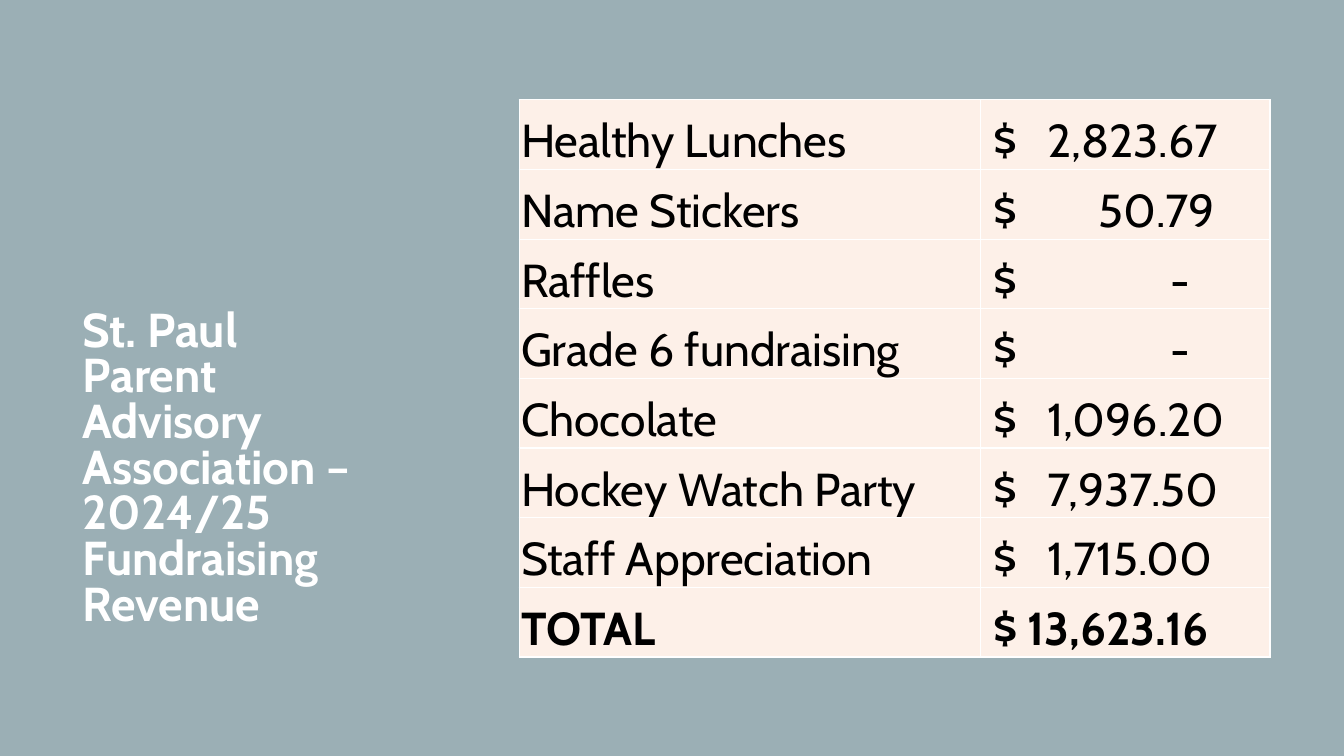
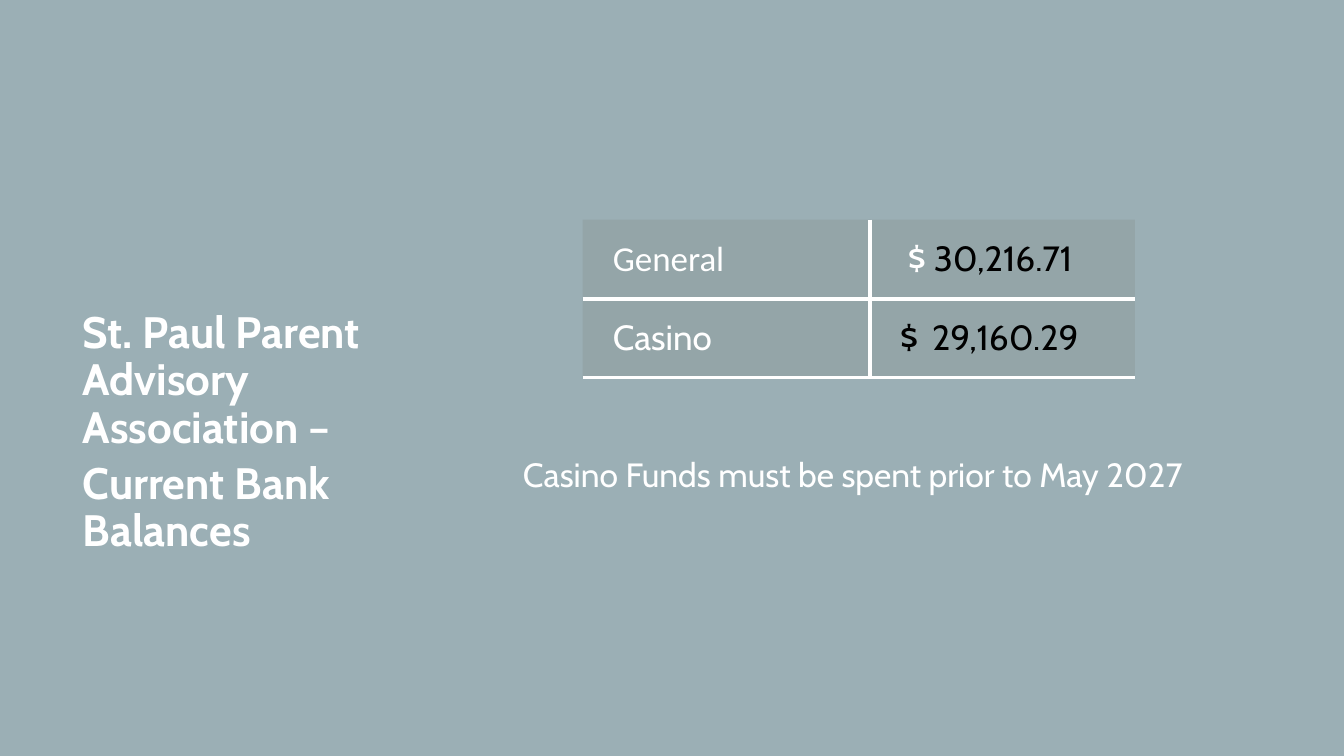
from pptx import Presentation
from pptx.dml.color import RGBColor
from pptx.enum.text import MSO_ANCHOR, MSO_AUTO_SIZE, PP_ALIGN
from pptx.oxml.ns import qn
from pptx.util import Pt
from lxml.etree import SubElement

SLATE = RGBColor(0x9B, 0xAF, 0xB5)
CREAM = RGBColor(0xFD, 0xF0, 0xE8)
GREY = RGBColor(0x87, 0x8E, 0x8B)
WHITE = RGBColor(0xFF, 0xFF, 0xFF)
BLACK = RGBColor(0x00, 0x00, 0x00)
FONT = "Cabin"
NO_STYLE = "{2D5ABB26-0587-4C30-8999-92F81FD0307C}"

TITLE_BOX = {"left": Pt(51.84), "top": Pt(218.16), "width": Pt(226.8), "height": Pt(241.92)}
TITLE_FRAME = {"word_wrap": True, "auto_size": MSO_AUTO_SIZE.NONE, "vertical_anchor": MSO_ANCHOR.TOP}
TITLES = [
    (["St. Paul Parent Advisory Association – 2024/25 Fundraising Revenue"], 34, 0.8),
    (["St. Paul Parent Advisory Association –", "Current Bank Balances"], 31.4, 0.9),
]
REVENUE = [
    ("Healthy Lunches", "$\t2,823.67", 38.5),
    ("Name Stickers", "$\t50.79", 75.5),
    ("Raffles", "$\t-", 127),
    ("Grade 6 fundraising", "$\t-", 127),
    ("Chocolate", "$\t1,096.20", 38.5),
    ("Hockey Watch Party", "$\t7,937.50", 38.5),
    ("Staff Appreciation", "$\t1,715.00", 38.5),
    ("TOTAL", "$ 13,623.16", None),
]
BALANCES = [
    [([("General", WHITE, "Calibri")], 21.6, None, "RB"),
     ([("$ ", WHITE, FONT), ("30,216.71", BLACK, FONT)], 27.2, None, "LB")],
    [([("Casino", WHITE, FONT)], 21.6, None, "RTB"),
     ([("$\t29,160.29", BLACK, FONT)], 21.6, 22.8, "LTB")],
]


def apply(obj, values):
    for name, value in values.items():
        setattr(obj, name, value)


def fill_cell(cell, runs, size, margins, tab, sides, line, color):
    left, top, right, bottom = map(Pt, margins)
    apply(cell, {"margin_left": left, "margin_top": top, "margin_right": right,
                 "margin_bottom": bottom, "vertical_anchor": MSO_ANCHOR.BOTTOM})
    p = cell.text_frame.paragraphs[0]
    if tab:
        tabs = SubElement(p._p.get_or_add_pPr(), qn("a:tabLst"))
        SubElement(tabs, qn("a:tab"), pos=str(Pt(tab)), algn="l")
    for text, ink, font, bold in runs:
        r = p.add_run()
        r.text = text
        apply(r.font, {"name": font, "size": Pt(size), "bold": bold})
        r.font.color.rgb = ink
    tc_pr = cell._tc.get_or_add_tcPr()
    for side in sides:
        ln = SubElement(tc_pr, qn(f"a:ln{side}"), w=str(Pt(line)))
        SubElement(SubElement(ln, qn("a:solidFill")), qn("a:srgbClr"), val=str(WHITE))
    cell.fill.solid()
    cell.fill.fore_color.rgb = color


prs = Presentation()
apply(prs, {"slide_width": Pt(960), "slide_height": Pt(540)})
bg = prs.slide_master.background.fill
bg.solid()
bg.fore_color.rgb = SLATE

slides = []
for lines, size, spacing in TITLES:
    s = prs.slides.add_slide(prs.slide_layouts[5])
    slides.append(s)
    apply(s.shapes.title, TITLE_BOX)
    tf = s.shapes.title.text_frame
    apply(tf, TITLE_FRAME)
    tf.text = "\n".join(lines)
    for p in tf.paragraphs:
        apply(p, {"alignment": PP_ALIGN.LEFT, "line_spacing": spacing,
                  "space_before": Pt(0), "space_after": Pt(6)})
        apply(p.runs[0].font, {"name": FONT, "size": Pt(size), "bold": True})
        p.runs[0].font.color.rgb = WHITE

tables = []
for s, rows, left, top, widths, height in [
    (slides[0], len(REVENUE), 370.8, 71.28, (329.76, 206.64), 49.76),
    (slides[1], len(BALANCES), 416.16, 156.96, (205.2, 189.36), 55.8),
]:
    sp = s.shapes.add_table(rows, 2, Pt(left), Pt(top), Pt(sum(widths)), Pt(height * rows))
    sp._element.xpath(".//a:tableStyleId")[0].text = NO_STYLE
    table = sp.table
    apply(table, {"first_row": False, "horz_banding": False})
    for column, width in zip(table.columns, widths):
        column.width = Pt(width)
    for row in table.rows:
        row.height = Pt(height)
    tables.append(table)

for i, (label, amount, tab) in enumerate(REVENUE):
    bold = label == "TOTAL"
    for j, (text, margin, stop) in enumerate([(label, 1.44, None), (amount, 8.9, tab)]):
        fill_cell(tables[0].cell(i, j), [(text, BLACK, FONT, bold)], 33,
                  (margin, 1.44, 1.44, 0), stop, "LRTB", 1, CREAM)

for i, row in enumerate(BALANCES):
    for j, (runs, margin, tab, sides) in enumerate(row):
        cell = tables[1].cell(i, j)
        fill_cell(cell, [(*run, False) for run in runs], 25,
                  (margin, 12.96, 12.96, 12.96), tab, sides, 3, GREY)
        shade = cell._tc.tcPr.find(qn("a:solidFill")).find(qn("a:srgbClr"))
        SubElement(shade, qn("a:alpha"), val="30000")

sp = slides[1].shapes.add_textbox(Pt(366.48), Pt(320.4), Pt(493.92), Pt(36))
tf = sp.text_frame
apply(tf, {"word_wrap": True, "auto_size": MSO_AUTO_SIZE.SHAPE_TO_FIT_TEXT})
r = tf.paragraphs[0].add_run()
r.text = "Casino Funds must be spent prior to May 2027"
apply(r.font, {"name": FONT, "size": Pt(24)})
r.font.color.rgb = WHITE

prs.save("out.pptx")
